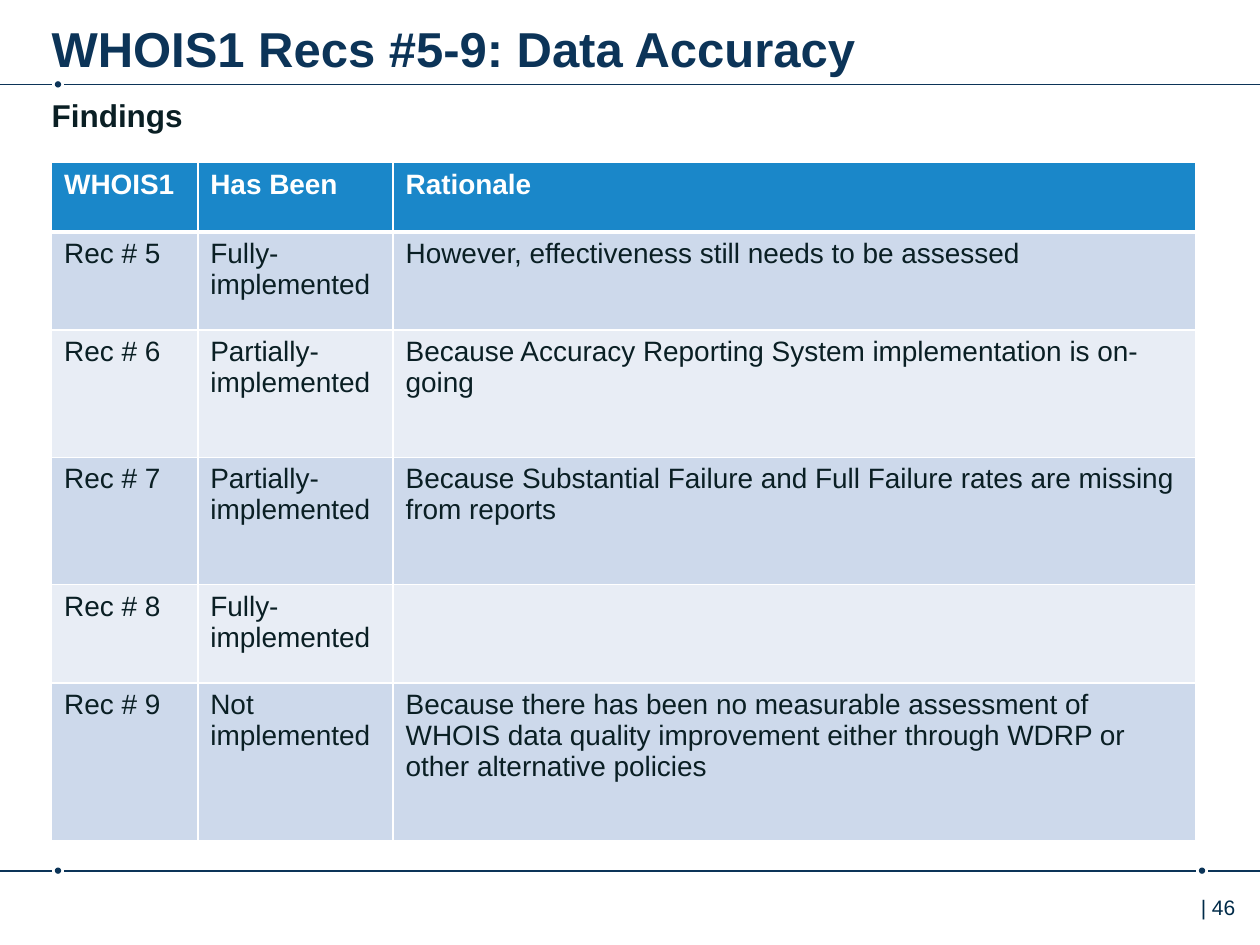
from lxml import etree
from pptx import Presentation
from pptx import util as u
from pptx.dml.color import RGBColor
from pptx.enum import shapes, text
from pptx.oxml.ns import qn

WIDTH, HEIGHT = 10, 7.5
MARGIN = 0.41
DOT = 0.05
COLOURS = {
    "navy": "0C3458", "number": "002B49", "ink": "0A1F24", "white": "FFFFFF",
    "header": "1A87C9", "odd": "CDD9EB", "even": "E8EDF5",
}
COLUMN_WIDTHS = [1.16, 1.55, 6.37]
ROW_HEIGHTS = [0.55, 0.78, 1.01, 1.01, 0.78, 1.25]
FINDINGS = [
    ("WHOIS1", "Has Been", "Rationale"),
    ("Rec # 5", "Fully-implemented", "However, effectiveness still needs to be assessed"),
    ("Rec # 6", "Partially-implemented",
     "Because Accuracy Reporting System implementation is on-going"),
    ("Rec # 7", "Partially-implemented",
     "Because Substantial Failure and Full Failure rates are missing from reports"),
    ("Rec # 8", "Fully-implemented", ""),
    ("Rec # 9", "Not implemented",
     "Because there has been no measurable assessment of WHOIS data quality "
     "improvement either through WDRP or other alternative policies"),
]


def colour(name):
    """Return the named colour."""
    return RGBColor.from_string(COLOURS[name])


def write(frame, words, size, ink, bold=False):
    """Put words in a text frame and format their runs."""
    frame.text = words
    for run in frame.paragraphs[0].runs:
        run.font.name = "Arial"
        run.font.size = u.Pt(size)
        run.font.bold = bold
        run.font.color.rgb = colour(ink)


def add_label(slide, box, insets, words, size, ink, bold=False):
    """Add a text box with left, top, right and bottom insets."""
    frame = slide.shapes.add_textbox(*map(u.Inches, box)).text_frame
    frame.word_wrap = True
    frame.vertical_anchor = text.MSO_ANCHOR.TOP
    (frame.margin_left, frame.margin_top,
     frame.margin_right, frame.margin_bottom) = map(u.Inches, insets)
    write(frame, words, size, ink, bold)


def add_rule(slide, y, dots):
    """Add a full-width rule broken by a dot at each given centre."""
    gap = DOT
    starts = [0] + [x + gap for x in dots]
    ends = [x - gap for x in dots] + [WIDTH]
    for start, end in zip(starts, ends):
        segment = slide.shapes.add_connector(
            shapes.MSO_CONNECTOR.STRAIGHT,
            u.Inches(start), u.Inches(y), u.Inches(end), u.Inches(y))
        segment.line.color.rgb = colour("navy")
        segment.line.width = u.Pt(1)
        etree.SubElement(segment._element.spPr, qn("a:effectLst"))
    for x in dots:
        dot = slide.shapes.add_shape(
            shapes.MSO_SHAPE.OVAL, u.Inches(x - DOT / 2), u.Inches(y - DOT / 2),
            u.Inches(DOT), u.Inches(DOT))
        dot.shadow.inherit = False
        dot.fill.solid()
        dot.fill.fore_color.rgb = colour("navy")
        dot.line.fill.background()


def add_borders(cell, top, bottom):
    """Give a cell white borders with the given top and bottom widths."""
    properties = cell._tc.get_or_add_tcPr()
    widths = {"a:lnL": 1, "a:lnR": 1, "a:lnT": top, "a:lnB": bottom}
    for place, (tag, width) in enumerate(widths.items()):
        border = etree.Element(qn(tag), w=str(u.Pt(width)))
        fill = etree.SubElement(border, qn("a:solidFill"))
        etree.SubElement(fill, qn("a:srgbClr"), val=COLOURS["white"])
        properties.insert(place, border)


def add_findings(slide, left, top):
    """Add the banded table of findings."""
    table = slide.shapes.add_table(
        len(ROW_HEIGHTS), len(COLUMN_WIDTHS), u.Inches(left), u.Inches(top),
        u.Inches(sum(COLUMN_WIDTHS)), u.Inches(sum(ROW_HEIGHTS))).table
    for column, width in zip(table.columns, COLUMN_WIDTHS):
        column.width = u.Inches(width)
    for r, (row, height, entries) in enumerate(zip(table.rows, ROW_HEIGHTS, FINDINGS)):
        row.height = u.Inches(height)
        is_header = r == 0
        band = "header" if is_header else ("odd" if r % 2 else "even")
        for cell, entry in zip(row.cells, entries):
            cell.fill.solid()
            cell.fill.fore_color.rgb = colour(band)
            write(cell.text_frame, entry, 16, "white" if is_header else "ink", is_header)
            add_borders(cell, 3 if r == 1 else 1, 3 if is_header else 1)


def main():
    """Build the slide and save it."""
    deck = Presentation()
    deck.slide_width, deck.slide_height = u.Inches(WIDTH), u.Inches(HEIGHT)
    slide = deck.slides.add_slide(deck.slide_layouts[6])
    left_dot = MARGIN + DOT
    add_rule(slide, 0.67, [left_dot])
    add_rule(slide, 6.91, [left_dot, WIDTH - left_dot])
    add_label(slide, (9.29, 7.05, 0.87, 0.4), (0.24, 0.05, 0.1, 0.05),
              "| 46", 12, "number")
    add_label(slide, (MARGIN, 0.05, 8.76, 0.49), (0, 0.1, 0, 0),
              "WHOIS1 Recs #5-9: Data Accuracy", 28, "navy", True)
    add_label(slide, (MARGIN, 0.76, 4.52, 0.3), (0, 0, 0, 0),
              "Findings", 18, "ink", True)
    add_findings(slide, MARGIN, 1.29)
    deck.save("out.pptx")


if __name__ == "__main__":
    main()
